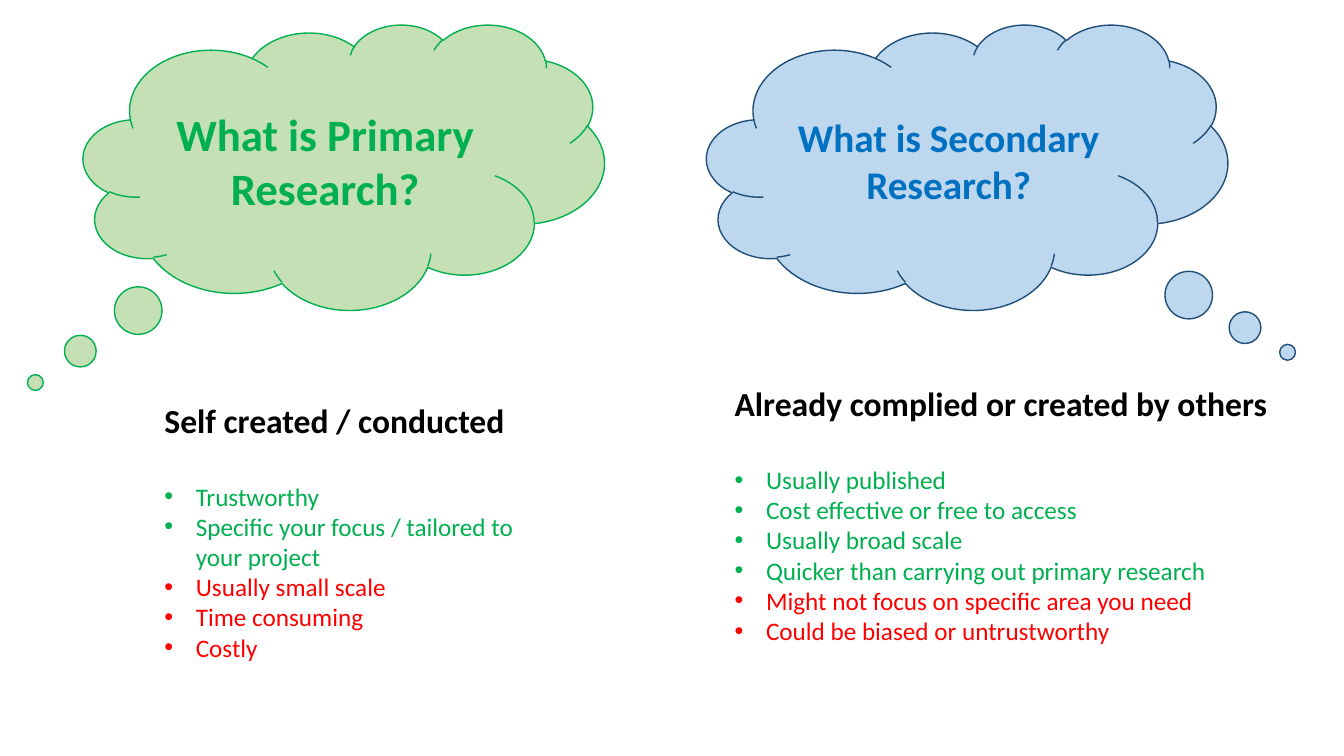
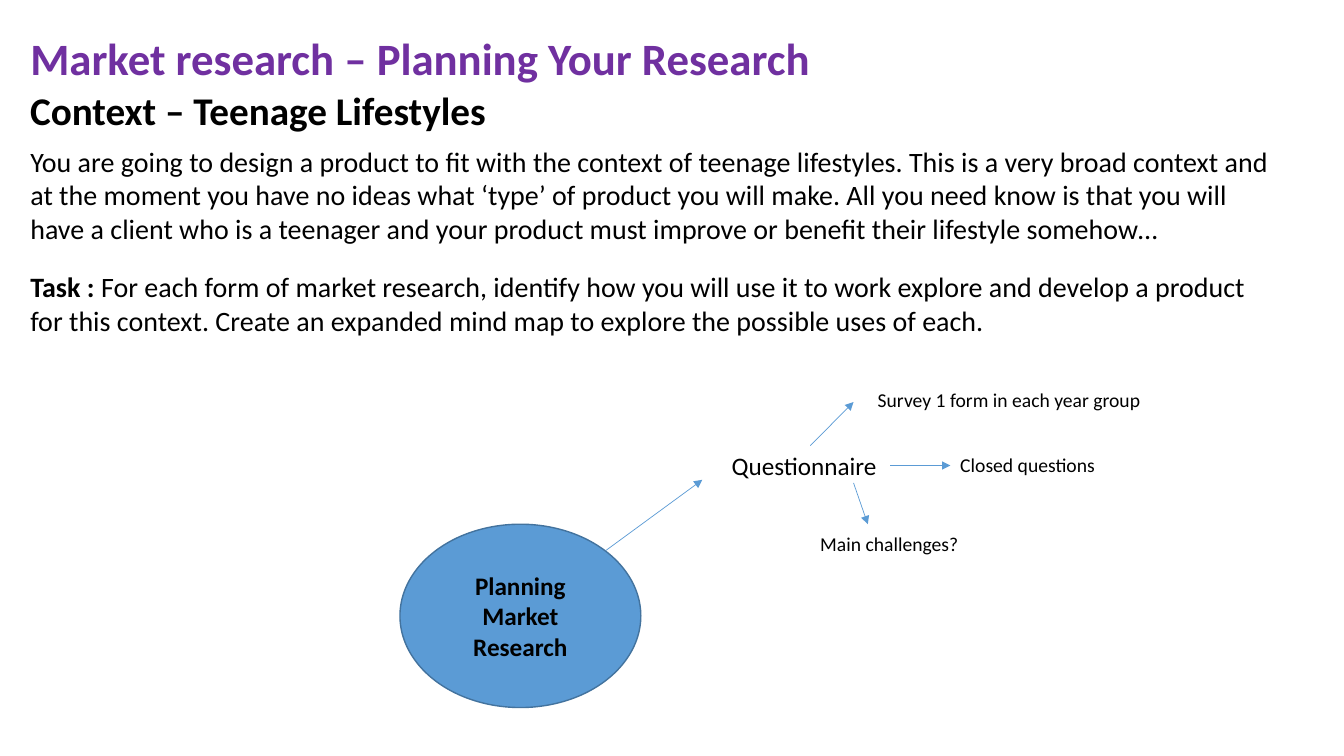
import lxml.etree
import pptx
import pptx.dml.color
import pptx.enum.shapes
import pptx.enum.text
import pptx.oxml.ns
import pptx.util

Cm = pptx.util.Cm
Pt = pptx.util.Pt
RGB = pptx.dml.color.RGBColor
Align = pptx.enum.text.PP_ALIGN
Anchor = pptx.enum.text.MSO_ANCHOR
Shape = pptx.enum.shapes.MSO_SHAPE

BLACK = RGB(0x00, 0x00, 0x00)
GREEN = RGB(0x00, 0xB0, 0x50)
RED = RGB(0xFF, 0x00, 0x00)
PURPLE = RGB(0x70, 0x30, 0xA0)
BLUE = RGB(0x00, 0x70, 0xC0)
NAVY = RGB(0x1F, 0x4E, 0x79)
STEEL = RGB(0x43, 0x73, 0x9E)
SKY = RGB(0x5B, 0x9B, 0xD5)
PALE_BLUE = RGB(0xBD, 0xD7, 0xEE)
PALE_GREEN = RGB(0xC5, 0xE0, 0xB4)

FONT = "Calibri"
EDGE = 0.51
FRAME = {"word_wrap": True, "auto_size": pptx.enum.text.MSO_AUTO_SIZE.NONE}
PARA = {"alignment": Align.LEFT, "line_spacing": 1.0,
        "space_before": Pt(0), "space_after": Pt(0)}


def style(item, values):
    for name, value in values.items():
        setattr(item, name, value)


def place(shape, box):
    style(shape, dict(zip(("left", "top", "width", "height"), map(Cm, box))))


def add_run(para, text, size, color=BLACK, bold=False):
    run = para.add_run()
    run.text = text
    style(run.font, {"name": FONT, "size": Pt(size), "bold": bold})
    run.font.color.rgb = color


def set_bullet(para, indent=0):
    """Hang a bullet by the indent in cm; zero means no bullet."""
    props = para._p.get_or_add_pPr()
    props.set("marL", str(Cm(indent)))
    props.set("indent", str(-Cm(indent)))
    if indent:
        add_child(props, "a:buFont", typeface="Arial")
        add_child(props, "a:buChar", char="•")
    else:
        add_child(props, "a:buNone")


def add_child(parent, tag, **attrs):
    lxml.etree.SubElement(parent, pptx.oxml.ns.qn(tag), attrs)


def open_frame(shape, anchor=Anchor.TOP):
    frame = shape.text_frame
    style(frame, {**FRAME, "vertical_anchor": anchor})
    return frame


def next_para(frame, **values):
    """Use the first paragraph while it is empty, then add more."""
    first = frame.paragraphs[0]
    para = frame.add_paragraph() if first.runs else first
    style(para, {**PARA, **values})
    return para


def add_label(slide, box, text, size, bold=False):
    label = slide.shapes.add_textbox(*map(Cm, box))
    add_run(next_para(open_frame(label)), text, size, bold=bold)


def add_bubble(slide, kind, box, fill, line, text, size, color, tail=()):
    shape = slide.shapes.add_shape(kind, *map(Cm, box))
    shape.shadow.inherit = False
    for index, value in enumerate(tail):
        shape.adjustments[index] = value
    shape.fill.solid()
    shape.fill.fore_color.rgb = fill
    shape.line.color.rgb = line
    shape.line.width = Pt(1)
    para = next_para(open_frame(shape, Anchor.MIDDLE), alignment=Align.CENTER)
    add_run(para, text, size, color, True)


def add_arrow(slide, *ends):
    kind = pptx.enum.shapes.MSO_CONNECTOR.STRAIGHT
    arrow = slide.shapes.add_connector(kind, *map(Cm, ends))
    arrow.line.color.rgb = SKY
    arrow.line.width = Pt(0.5)
    props = arrow.element.spPr
    add_child(props.find(pptx.oxml.ns.qn("a:ln")), "a:tailEnd", type="triangle")
    add_child(props, "a:effectLst")


def fill_list(holder, box, heading, pros, cons):
    place(holder, box)
    frame = open_frame(holder)
    para = next_para(frame, space_after=Pt(29))
    add_run(para, heading, 24, bold=True)
    set_bullet(para)
    for color, items in ((GREEN, pros), (RED, cons)):
        for item in items:
            para = next_para(frame)
            add_run(para, item, 18, color)
            set_bullet(para, 0.79)


def build_types(deck):
    slide = deck.slides.add_slide(deck.slide_layouts[3])
    title = slide.shapes.title.element
    title.getparent().remove(title)
    clouds = (
        (2.1, PALE_GREEN, GREEN, "What is Primary Research?", 32, GREEN,
         (-0.592, 0.756)),
        (17.81, PALE_BLUE, NAVY, "What is Secondary Research?", 28, BLUE,
         (0.615, 0.65)),
    )
    for left, *look in clouds:
        add_bubble(slide, Shape.CLOUD_CALLOUT, (left, 0.61, 13.13, 7.19), *look)
    fill_list(slide.placeholders[1], (3.89, 9.95, 9.58, 7.7),
              "Self created / conducted",
              ("Trustworthy", "Specific your focus / tailored to your project"),
              ("Usually small scale", "Time consuming", "Costly"))
    fill_list(slide.placeholders[2], (18.26, 9.53, 14.73, 7.7),
              "Already complied or created by others",
              ("Usually published", "Cost effective or free to access",
               "Usually broad scale",
               "Quicker than carrying out primary research"),
              ("Might not focus on specific area you need",
               "Could be biased or untrustworthy"))


def build_plan(deck):
    slide = deck.slides.add_slide(deck.slide_layouts[1])
    title = slide.shapes.title
    place(title, (EDGE, 0.64, 31.72, 1.63))
    add_run(next_para(open_frame(title)),
            "Market research – Planning Your Research", 32, PURPLE, True)
    add_label(slide, (EDGE, 2.06, 16.59, 1.45),
              "Context – Teenage Lifestyles", 28, True)

    body = slide.placeholders[1]
    place(body, (EDGE, 3.51, 31.88, 5.2))
    frame = open_frame(body)
    para = next_para(frame, space_after=Pt(17.5))
    add_run(para, "You are going to design a product to fit with the context of "
            "teenage lifestyles. This is a very broad context and at the moment "
            "you have no ideas what ‘type’ of product you will make. All you "
            "need know is that you will have a client who is a teenager and "
            "your product must improve or benefit their lifestyle somehow…", 20)
    set_bullet(para)
    para = next_para(frame)
    add_run(para, "Task : ", 20, bold=True)
    add_run(para, "For each form of market research, identify how you will use "
            "it to work explore and develop a product for this context. Create "
            "an expanded mind map to explore the possible uses of each.", 20)
    set_bullet(para)

    add_bubble(slide, Shape.OVAL, (10.08, 13.21, 6.07, 4.62), SKY, STEEL,
               "Planning Market Research", 18, BLACK)
    add_label(slide, (18.19, 11.23, 5.77, 1.02), "Questionnaire", 18)
    for left, top, width, text in (
            (21.87, 9.65, 9.22, "Survey 1 form in each year group"),
            (23.95, 11.3, 9.22, "Closed questions"),
            (20.42, 13.28, 5.28, "Main challenges?")):
        add_label(slide, (left, top, width, 0.86), text, 14)
    for ends in ((15.27, 13.87, 17.7, 12.09), (20.42, 11.23, 21.51, 10.13),
                 (22.43, 11.73, 23.95, 11.73), (21.51, 12.17, 21.87, 13.21)):
        add_arrow(slide, *ends)


def main():
    deck = pptx.Presentation()
    style(deck, {"slide_width": Cm(33.87), "slide_height": Cm(19.05)})
    build_types(deck)
    build_plan(deck)
    deck.save("out.pptx")


if __name__ == "__main__":
    main()
